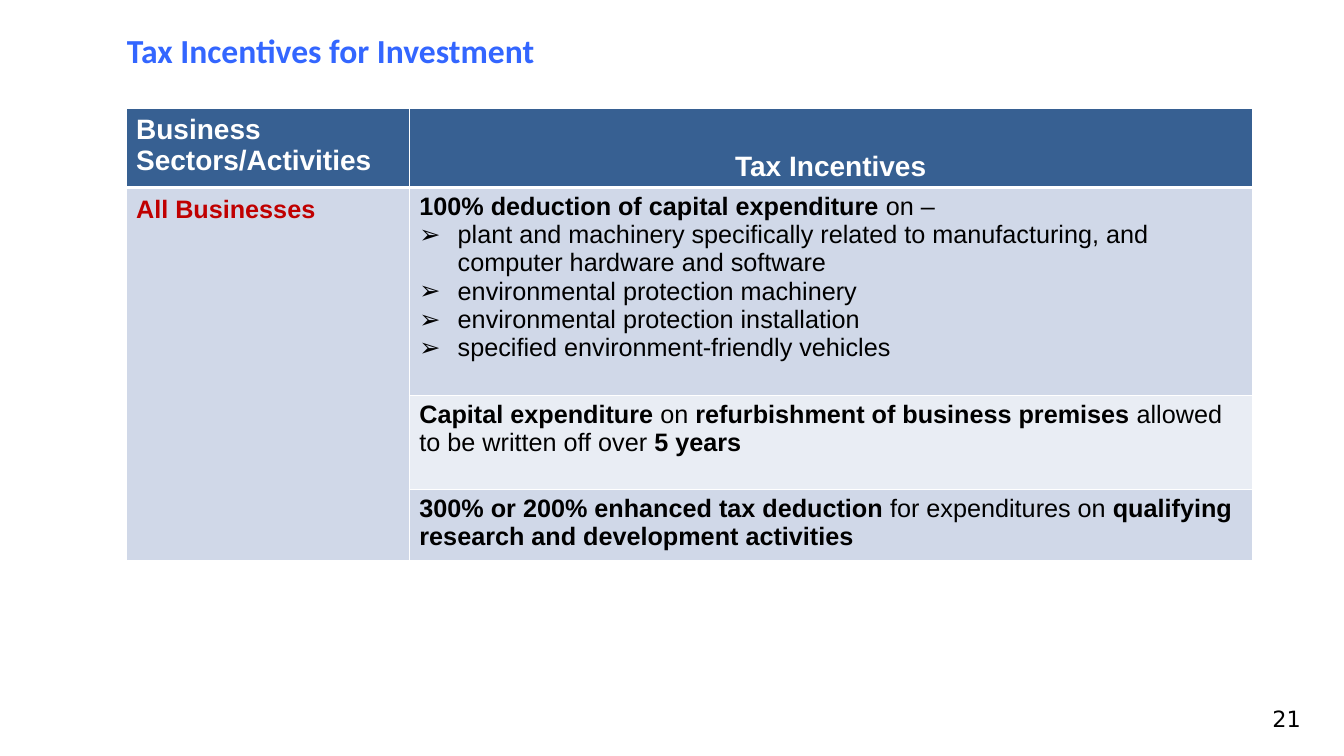
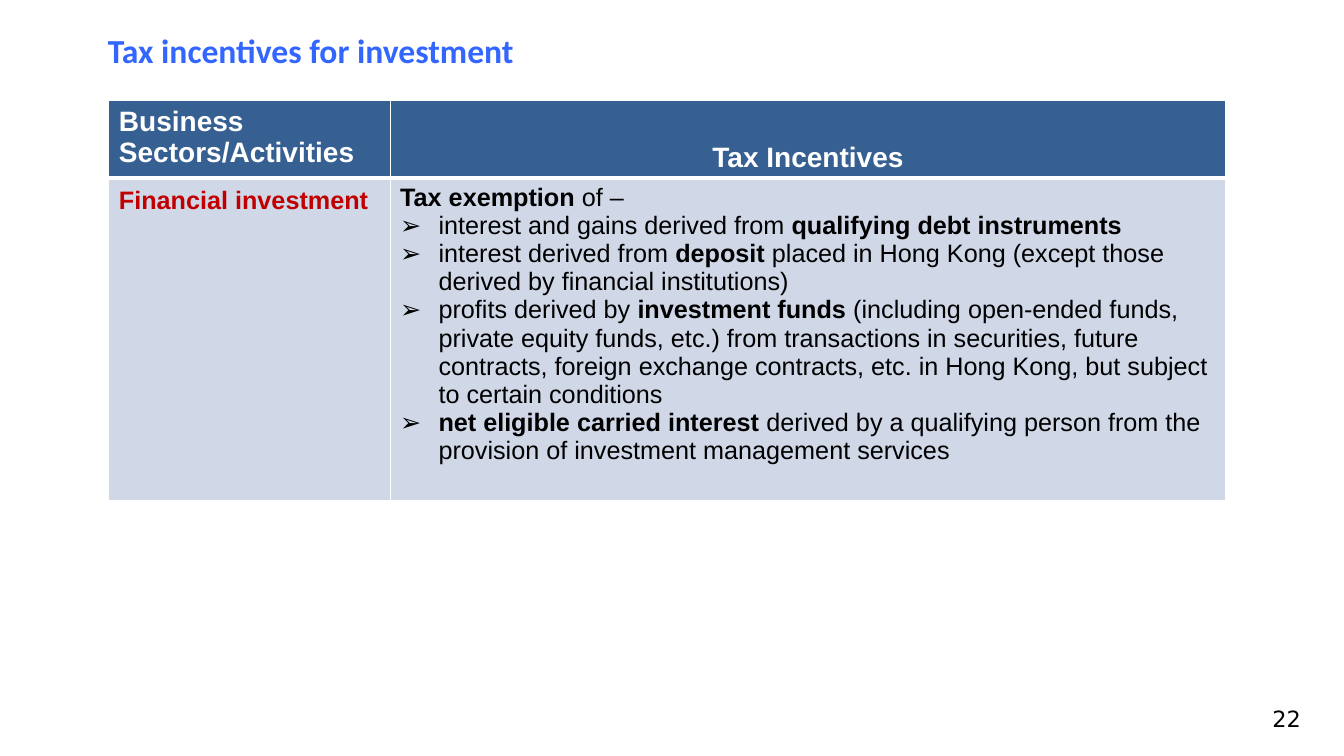
from lxml.etree import SubElement
from pptx import Presentation
from pptx.dml.color import RGBColor
from pptx.enum.text import MSO_ANCHOR, PP_ALIGN
from pptx.oxml import parse_xml
from pptx.oxml.ns import nsdecls, qn
from pptx.util import Emu, Pt

PX = 9144
COLORS = {
    "title": "3366FF", "head": "376092", "label": "C00000", "text": "000000",
    "white": "FFFFFF", "band": "D0D8E8", "pale": "E9EDF4",
}
INDENT = 38
BULLET = "➢"


def px(n):
    """Turn px into EMU."""
    return Emu(n * PX)


def rgb(name):
    """Look up a named colour."""
    return RGBColor.from_string(COLORS[name])


def bullet(para):
    """Give a paragraph an arrow bullet with a hanging indent."""
    props = para._p.get_or_add_pPr()
    props.set("marL", str(px(INDENT)))
    props.set("indent", str(px(-INDENT)))
    SubElement(props, qn("a:buFont")).set("typeface", "Arial")
    SubElement(props, qn("a:buChar")).set("char", BULLET)


def write(frame, text, size=18, color="text", font="Arial", bold=False,
          align=PP_ALIGN.LEFT):
    """Write lines of text; *stars* mark bold and a leading arrow a bullet."""
    frame.word_wrap = True
    for i, line in enumerate(text.split("\n")):
        para = frame.add_paragraph() if i else frame.paragraphs[0]
        para.alignment = align
        if line.startswith(BULLET):
            bullet(para)
        for k, part in enumerate(line.removeprefix(BULLET).split("*")):
            if part:
                run = para.add_run()
                run.text = part
                run.font.size = Pt(size)
                run.font.name = font
                run.font.bold = bold or k % 2 == 1
                run.font.color.rgb = rgb(color)


def label(slide, box, text, inset=None, **style):
    """Add a text box with an optional even inset."""
    frame = slide.shapes.add_textbox(*map(px, box)).text_frame
    if inset is not None:
        frame.margin_left = frame.margin_right = px(inset)
        frame.margin_top = frame.margin_bottom = px(inset)
    write(frame, text, **style)


def paint(cell, color, top, low):
    """Fill a cell and draw its white borders."""
    cell.fill.solid()
    cell.fill.fore_color.rgb = rgb(color)
    props = cell._tc.get_or_add_tcPr()
    sides = {"lnL": 1, "lnR": 1, "lnT": top, "lnB": low}
    for i, (side, width) in enumerate(sides.items()):
        props.insert(i, parse_xml(
            f'<a:{side} {nsdecls("a")} w="{Pt(width)}"><a:solidFill>'
            f'<a:srgbClr val="{COLORS["white"]}"/></a:solidFill></a:{side}>'))


def grid(slide, box, split, rows, sector, items):
    """Add the table of incentives for one sector."""
    left, top, width = box
    size = len(rows)
    table = slide.shapes.add_table(
        size, 2, px(left), px(top), px(width), px(sum(rows))).table
    table.first_row = table.horz_banding = False
    for col, wide in zip(table.columns, (split, width - split)):
        col.width = px(wide)
    for r, high in enumerate(rows):
        table.rows[r].height = px(high)
        for c in range(2):
            shade = "head" if r == 0 else "pale" if c and r % 2 == 0 else "band"
            paint(table.cell(r, c), shade, 3 if r == 1 else 1, 3 if r == 0 else 1)
    head = {"size": 20, "color": "white", "bold": True}
    write(table.cell(0, 0).text_frame, "Business Sectors/Activities", **head)
    topic = table.cell(0, 1)
    topic.vertical_anchor = MSO_ANCHOR.BOTTOM
    write(topic.text_frame, "Tax Incentives", align=PP_ALIGN.CENTER, **head)
    name = table.cell(1, 0)
    if size > 2:
        name.merge(table.cell(size - 1, 0))
    name.margin_top = px(8)
    write(name.text_frame, sector, color="label", bold=True)
    for r, item in enumerate(items, 1):
        write(table.cell(r, 1).text_frame, item)


def page(deck, title, left, number, **table):
    """Add a slide with its title, table and number."""
    slide = deck.slides.add_slide(deck.slide_layouts[6])
    label(slide, (left, 30, 1200 - left, 53), title, inset=0, size=24,
          color="title", font="Calibri", bold=True)
    grid(slide, **table)
    label(slide, (990, 695, 310, 40), str(number), size=16,
          font="DejaVu Sans", align=PP_ALIGN.RIGHT)


def main():
    """Build and save the deck."""
    deck = Presentation()
    deck.slide_width, deck.slide_height = px(1333), px(750)
    page(deck, "Tax Incentives for Investment", 126, 21,
         box=(125, 108, 1117), split=281, rows=(78, 206, 94, 66),
         sector="All Businesses", items=(
             "*100% deduction of capital expenditure *on –\n"
             "➢plant and machinery specifically related to manufacturing, "
             "and computer hardware and software\n"
             "➢environmental protection machinery\n"
             "➢environmental protection installation\n"
             "➢specified environment-friendly vehicles",
             "*Capital expenditure *on *refurbishment of business premises *"
             "allowed to be written off over *5 years*",
             "*300% or 200% enhanced tax deduction *for expenditures on "
             "*qualifying research and development activities*"))
    page(deck, "Tax incentives for investment", 107, 22,
         box=(108, 100, 1108), split=279, rows=(72, 320),
         sector="Financial investment", items=(
             "*Tax exemption *of –\n"
             "➢interest and gains derived from *qualifying debt instruments*\n"
             "➢interest derived from *deposit *placed in Hong Kong "
             "(except those derived by financial institutions)\n"
             "➢profits derived by *investment funds *(including open-ended "
             "funds, private equity funds, etc.) from transactions in "
             "securities, future contracts, foreign exchange contracts, etc. "
             "in Hong Kong, but subject to certain conditions\n"
             "➢*net eligible carried interest *derived by a qualifying person "
             "from the provision of investment management services",))
    deck.save("out.pptx")


if __name__ == "__main__":
    main()
